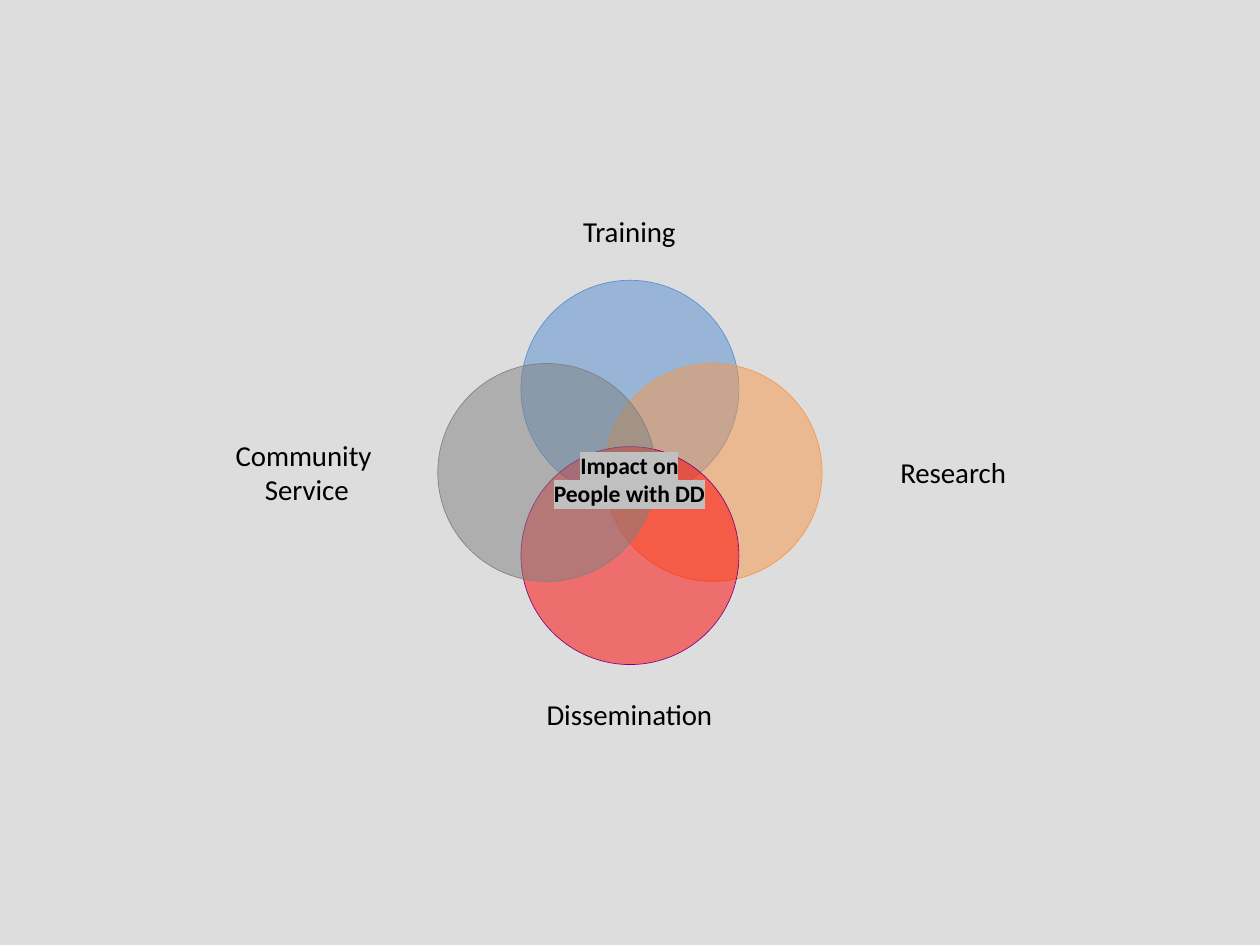
"""Build a slide with a four-circle diagram around a shared impact."""
from lxml.etree import SubElement
from pptx import Presentation
from pptx.dml.color import RGBColor
from pptx.enum.shapes import MSO_SHAPE
from pptx.enum.text import MSO_ANCHOR, PP_ALIGN
from pptx.oxml.ns import qn
from pptx.util import Inches, Pt

BACKGROUND = RGBColor(0xDD, 0xDD, 0xDD)
BLACK = RGBColor(0, 0, 0)
BLUE = RGBColor(0x55, 0x8E, 0xD5)
ORANGE = RGBColor(0xF7, 0x96, 0x46)
RED = RGBColor(0xFF, 0, 0)
PURPLE = RGBColor(0x80, 0, 0x80)
GRAY = RGBColor(0x80, 0x80, 0x80)
HIGHLIGHT = RGBColor(0xC0, 0xC0, 0xC0)

CENTER_X, CENTER_Y = 5, 3.75
DIAMETER, OFFSET = 1.73, 0.66
LABEL_HEIGHT = 0.43

deck = Presentation()
deck.slide_width, deck.slide_height = Inches(10), Inches(7.5)
page = deck.slides.add_slide(deck.slide_layouts[6])
page.background.fill.solid()
page.background.fill.fore_color.rgb = BACKGROUND


def style_paragraph(para, size, bold=False):
    para.alignment = PP_ALIGN.CENTER
    para.font.name = "Calibri"
    para.font.size = Pt(size)
    para.font.bold = bold
    para.font.color.rgb = BLACK


circles = [
    (["Training"], 0, -1, BLUE, BLUE, 4.13, 1.62),
    (["Research"], 1, 0, ORANGE, ORANGE, 6.7, 3.53),
    (["Dissemination"], 0, 1, RED, PURPLE, 4.13, 5.45),
    (["Community ", "Service"], -1, 0, GRAY, GRAY, 1.57, 3.53),
]
for lines, step_x, step_y, fill_color, line_color, label_left, label_top in circles:
    circle = page.shapes.add_shape(
        MSO_SHAPE.OVAL,
        Inches(CENTER_X + step_x * OFFSET - DIAMETER / 2),
        Inches(CENTER_Y + step_y * OFFSET - DIAMETER / 2),
        Inches(DIAMETER), Inches(DIAMETER))
    circle.shadow.inherit = False
    circle.fill.solid()
    circle.fill.fore_color.rgb = fill_color
    color = circle.fill._xPr.find(qn("a:solidFill"))[0]
    SubElement(color, qn("a:alpha"), val="50000")
    circle.line.color.rgb = line_color
    circle.line.width = Pt(0.37)

    label = page.shapes.add_textbox(
        Inches(label_left), Inches(label_top), Inches(DIAMETER), Inches(LABEL_HEIGHT))
    frame = label.text_frame
    frame.word_wrap = False
    frame.vertical_anchor = MSO_ANCHOR.MIDDLE
    frame.margin_left = frame.margin_right = frame.margin_top = frame.margin_bottom = 0
    frame.text = "\n".join(lines)
    for para in frame.paragraphs:
        style_paragraph(para, 16.5)

impact = page.shapes.add_textbox(Inches(4.25), Inches(3.53), Inches(1.49), Inches(0.56))
impact.text_frame.word_wrap = True
para = impact.text_frame.paragraphs[0]
style_paragraph(para, 13.5, bold=True)
span = para.add_run()
span.text = "Impact on People with DD"
highlight = SubElement(span.font._element, qn("a:highlight"))
SubElement(highlight, qn("a:srgbClr"), val=str(HIGHLIGHT))

deck.save("out.pptx")
